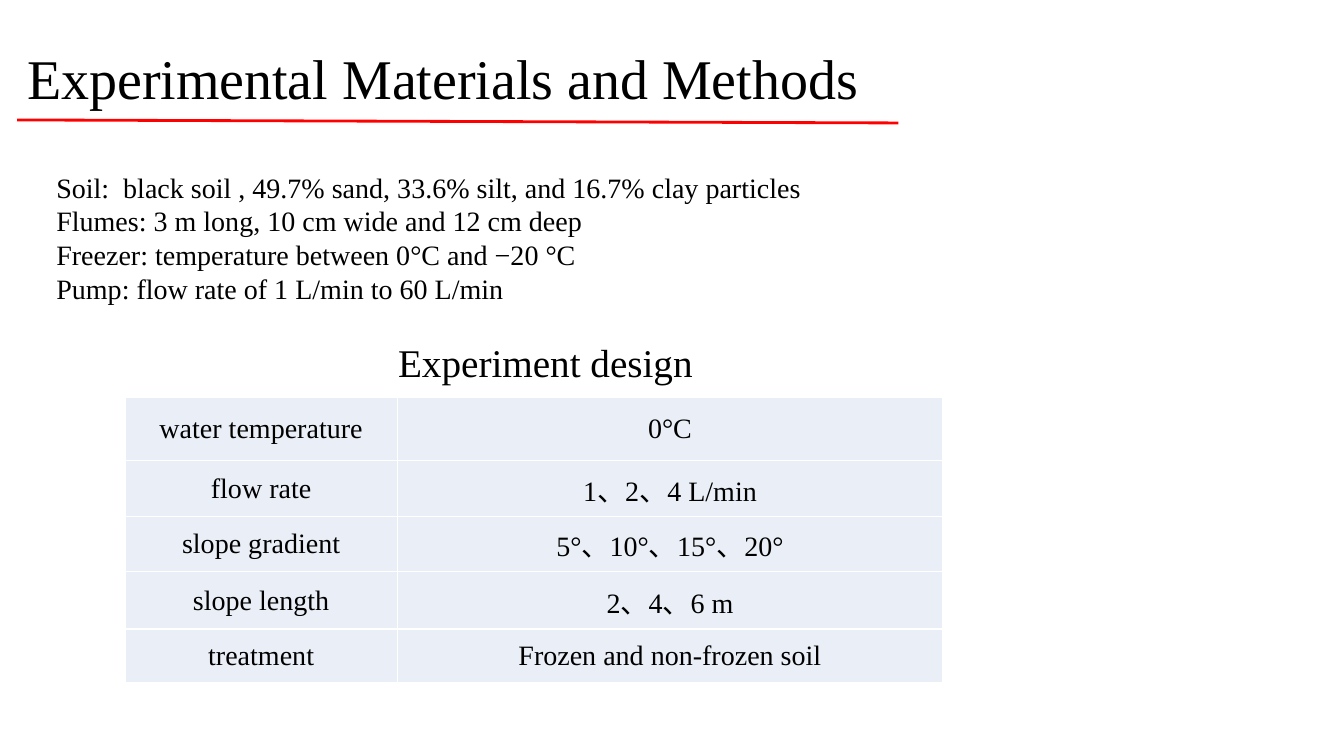
import pptx
import pptx.dml.color
import pptx.enum.shapes
import pptx.enum.text
import pptx.oxml
import pptx.oxml.ns
import pptx.util
from pptx.util import Inches

FONT = "Times New Roman"
BLACK, RED, WHITE, PALE_BLUE = "000000", "FF0000", "FFFFFF", "EAEFF7"
MATERIALS = [
    "Soil:  black soil , 49.7% sand, 33.6% silt, and 16.7% clay particles",
    "Flumes: 3 m long, 10 cm wide and 12 cm deep",
    "Freezer: temperature between 0°C and −20 °C",
    "Pump: flow rate of 1 L/min to 60 L/min",
]
DESIGN = [
    ("water temperature", "0°C"),
    ("flow rate", "1、2、4 L/min"),
    ("slope gradient", "5°、10°、15°、20°"),
    ("slope length", "2、4、6 m"),
    ("treatment", "Frozen and non-frozen soil"),
]
FACTOR_WIDTHS = [2.7, 5.41]
FACTOR_HEIGHTS = [0.63, 0.55, 0.55, 0.57, 0.53]


def color(hex_string):
    """Return the colour for a hex string."""
    return pptx.dml.color.RGBColor.from_string(hex_string)


def add_run(paragraph, text, size):
    """Add one black run in the slide font."""
    run = paragraph.add_run()
    run.text = text
    run.font.name = FONT
    run.font.size = pptx.util.Pt(size)
    run.font.color.rgb = color(BLACK)


def add_text(slide, box, lines, size, spacing=None, anchor="TOP"):
    """Add a wrapping text box with one paragraph for each line."""
    frame = slide.shapes.add_textbox(*map(Inches, box)).text_frame
    frame.word_wrap = True
    frame.vertical_anchor = pptx.enum.text.MSO_ANCHOR[anchor]
    for index, line in enumerate(lines):
        paragraph = frame.add_paragraph() if index else frame.paragraphs[0]
        if spacing:
            paragraph.line_spacing = spacing
        add_run(paragraph, line, size)


def add_underline(slide, start, end):
    """Add the red rule below the title."""
    rule = slide.shapes.add_connector(
        pptx.enum.shapes.MSO_CONNECTOR.STRAIGHT, *map(Inches, start + end))
    rule.line.color.rgb = color(RED)
    rule.line.width = pptx.util.Pt(2)
    rule._element.spPr.append(pptx.oxml.parse_xml(
        f"<a:effectLst {pptx.oxml.ns.nsdecls('a')}/>"))


def set_borders(cell):
    """Give a cell thin white borders on all four sides."""
    properties = cell._tc.get_or_add_tcPr()
    for index, side in enumerate("LRTB"):
        properties.insert(index, pptx.oxml.parse_xml(
            f"<a:ln{side} {pptx.oxml.ns.nsdecls('a')} w='12700'><a:solidFill>"
            f"<a:srgbClr val='{WHITE}'/></a:solidFill></a:ln{side}>"))


def fill_cell(cell, text):
    """Write centred text in a shaded, bordered cell."""
    cell.margin_left = cell.margin_right = cell.margin_top = Inches(0.01)
    cell.margin_bottom = Inches(0)
    cell.vertical_anchor = pptx.enum.text.MSO_ANCHOR.MIDDLE
    cell.fill.solid()
    cell.fill.fore_color.rgb = color(PALE_BLUE)
    set_borders(cell)
    paragraph = cell.text_frame.paragraphs[0]
    paragraph.alignment = pptx.enum.text.PP_ALIGN.CENTER
    add_run(paragraph, text, 20)


def add_design_table(slide, left, top):
    """Add the table of experiment factors and their levels."""
    table = slide.shapes.add_table(
        len(DESIGN), len(FACTOR_WIDTHS), Inches(left), Inches(top),
        Inches(sum(FACTOR_WIDTHS)), Inches(sum(FACTOR_HEIGHTS))).table
    table.first_row = table.horz_banding = False
    for column, width in zip(table.columns, FACTOR_WIDTHS):
        column.width = Inches(width)
    for row, height, factor in zip(table.rows, FACTOR_HEIGHTS, DESIGN):
        row.height = Inches(height)
        for cell, text in zip(row.cells, factor):
            fill_cell(cell, text)


def main():
    """Build and save the slide."""
    deck = pptx.Presentation()
    deck.slide_width, deck.slide_height = Inches(13.33), Inches(7.5)
    slide = deck.slides.add_slide(deck.slide_layouts[6])
    add_text(slide, (0.17, 0.22, 10.78, 1),
             ["Experimental Materials and Methods"], 40, 1.15, "MIDDLE")
    add_design_table(slide, 1.24, 3.94)
    add_underline(slide, (0.17, 1.19), (8.91, 1.22))
    add_text(slide, (0.46, 1.64, 8.45, 1.45), MATERIALS, 20)
    add_text(slide, (3.85, 3.31, 3.48, 0.57), ["Experiment design"], 28)
    deck.save("out.pptx")


if __name__ == "__main__":
    main()
